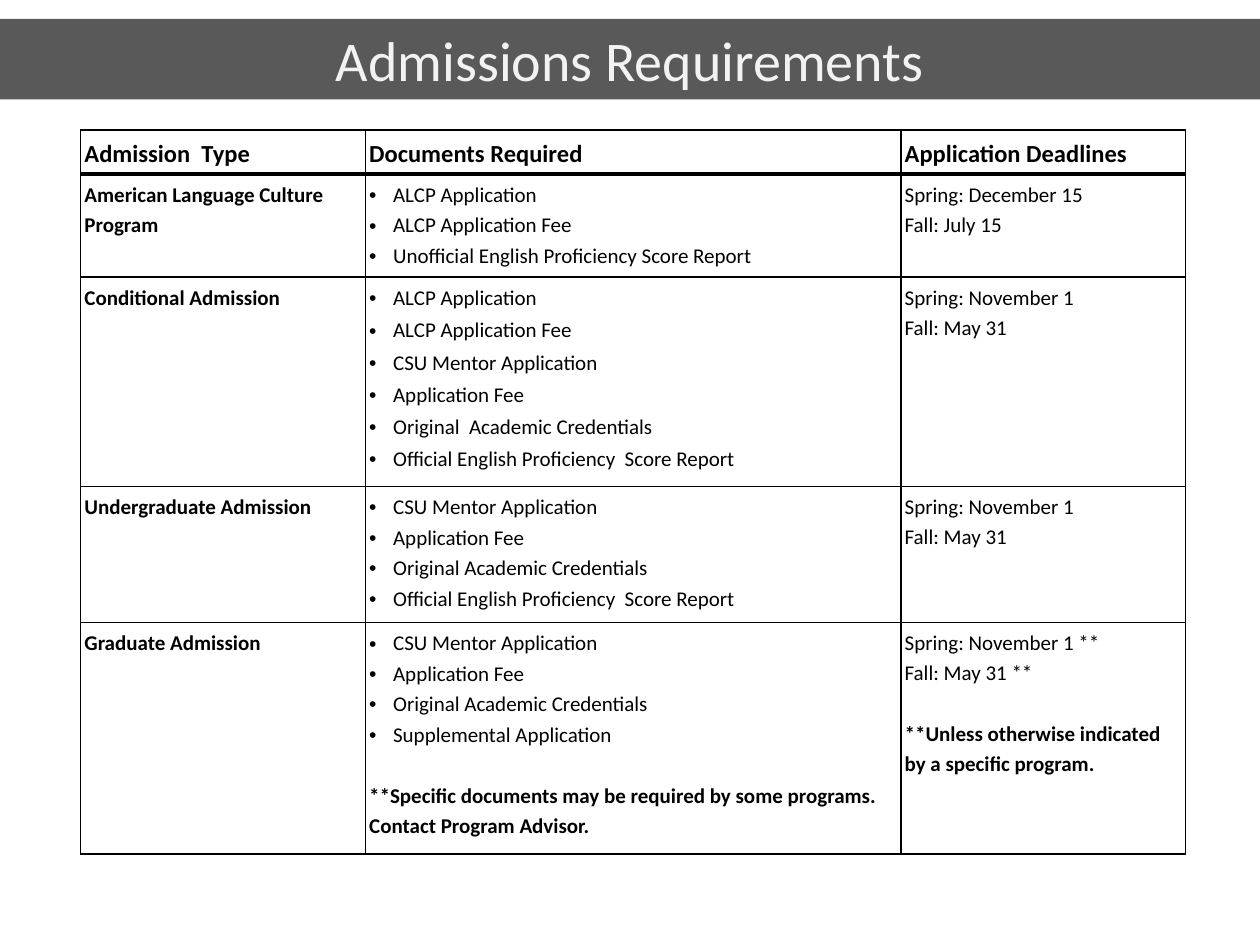
from lxml import etree
from pptx import Presentation
from pptx.dml.color import RGBColor
from pptx.enum.shapes import MSO_SHAPE
from pptx.enum.text import MSO_ANCHOR, PP_ALIGN
from pptx.oxml.ns import qn
from pptx.util import Inches, Pt

RECTANGLE = MSO_SHAPE.RECTANGLE
MIDDLE = MSO_ANCHOR.MIDDLE
CENTER = PP_ALIGN.CENTER

COLORS = {"banner": "595959", "title": "F2F2F2", "ink": "000000", "paper": "FFFFFF"}
FONT = "Calibri"
SLIDE_W, SLIDE_H = 10, 7.5

# Table grid, in inches
TABLE_LEFT, TABLE_TOP = 0.64, 1.03
COL_WIDTHS = [2.26, 4.25, 2.26]
ROW_HEIGHTS = [0.35, 0.82, 1.66, 1.08, 1.84]
CELL_MARGIN = 0.03
BULLET_INDENT = 0.19
THIN, THICK = 1, 2.25
BLANK_LINE = 17.4  # points, one line of 12 pt text

HEADERS = ["Admission  Type", "Documents Required", "Application Deadlines"]
REGULAR_DATES = ["Spring: November 1", "Fall: May 31"]

# type, documents, space after each document, document note, dates, date note
ADMISSIONS = [
    ("American Language Culture Program",
     ["ALCP Application", "ALCP Application Fee",
      "Unofficial English Proficiency Score Report"], 0, None,
     ["Spring: December 15", "Fall: July 15"], None),
    ("Conditional Admission",
     ["ALCP Application", "ALCP Application Fee", "CSU Mentor Application",
      "Application Fee", "Original  Academic Credentials",
      "Official English Proficiency  Score Report"], 1, None,
     REGULAR_DATES, None),
    ("Undergraduate Admission",
     ["CSU Mentor Application", "Application Fee", "Original Academic Credentials",
      "Official English Proficiency  Score Report"], 0, None,
     REGULAR_DATES, None),
    ("Graduate Admission",
     ["CSU Mentor Application", "Application Fee", "Original Academic Credentials",
      "Supplemental Application"], 0,
     "**Specific documents may be required by some programs. Contact Program Advisor.",
     [date + " **" for date in REGULAR_DATES],
     "**Unless otherwise indicated by a specific program."),
]


def rgb(name):
    return RGBColor.from_string(COLORS[name])


def style_font(font, size, color, bold=False):
    font.name = FONT
    font.size = Pt(size)
    font.bold = bold
    font.color.rgb = rgb(color)


def add_banner(s, text):
    banner = s.shapes.add_shape(RECTANGLE, 0, Inches(SLIDE_H * 0.02),
                                Inches(SLIDE_W), Inches(0.64))
    banner.shadow.inherit = False
    banner.fill.solid()
    banner.fill.fore_color.rgb = rgb("banner")
    banner.line.fill.background()
    tf = banner.text_frame
    tf.text = text
    tf.vertical_anchor = MIDDLE
    p = tf.paragraphs[0]
    p.alignment = CENTER
    style_font(p.runs[0].font, 32, "title")


def set_borders(cell, top, bottom):
    tcPr = cell._tc.get_or_add_tcPr()
    sides = [("L", THIN), ("R", THIN), ("T", top), ("B", bottom)]
    for i, (side, width) in enumerate(sides):
        ln = etree.Element(qn("a:ln" + side), w=str(Pt(width)))
        fill = etree.SubElement(ln, qn("a:solidFill"))
        etree.SubElement(fill, qn("a:srgbClr"), val=COLORS["ink"])
        tcPr.insert(i, ln)


def add_bullet(p):
    pPr = p._p.get_or_add_pPr()
    indent = Inches(BULLET_INDENT)
    pPr.set("marL", str(indent))
    pPr.set("indent", str(-indent))
    etree.SubElement(pPr, qn("a:buFont"), typeface="Arial")
    etree.SubElement(pPr, qn("a:buChar"), char="•")


def fill_cell(cell, lines, size=12, bold=False, bullets=False,
              spacing=1.19, after=0, note=None):
    """Write one paragraph per line, then an optional bold note."""
    cell.margin_left = cell.margin_right = Inches(CELL_MARGIN)
    cell.margin_top = cell.margin_bottom = Inches(CELL_MARGIN)
    cell.fill.solid()
    cell.fill.fore_color.rgb = rgb("paper")
    tf = cell.text_frame
    tf.text = "\n".join(lines + ([note] if note else []))
    for i, p in enumerate(tf.paragraphs):
        is_note = i == len(lines)
        p.line_spacing = spacing
        p.space_after = Pt(after)
        if is_note:
            p.space_before = Pt(BLANK_LINE)
        elif bullets:
            add_bullet(p)
        style_font(p.runs[0].font, size, "ink", bold or is_note)


def add_admissions_table(s):
    frame = s.shapes.add_table(len(ROW_HEIGHTS), len(COL_WIDTHS),
                               Inches(TABLE_LEFT), Inches(TABLE_TOP),
                               Inches(sum(COL_WIDTHS)), Inches(sum(ROW_HEIGHTS)))
    table = frame.table
    for column, width in zip(table.columns, COL_WIDTHS):
        column.width = Inches(width)
    for row, height in zip(table.rows, ROW_HEIGHTS):
        row.height = Inches(height)

    # Header row
    for cell, header in zip(table.rows[0].cells, HEADERS):
        fill_cell(cell, [header], size=14, bold=True, after=6)

    # One row per admission type
    for r, (kind, docs, after, doc_note, dates, date_note) in enumerate(ADMISSIONS, 1):
        fill_cell(table.cell(r, 0), [kind], bold=True, after=6)
        fill_cell(table.cell(r, 1), docs, bullets=True, after=after, note=doc_note)
        fill_cell(table.cell(r, 2), dates, spacing=1.18, note=date_note)

    # Grid lines, heavier below the header
    for r, row in enumerate(table.rows):
        for cell in row.cells:
            set_borders(cell, THICK if r == 1 else THIN, THICK if r == 0 else THIN)


def main():
    prs = Presentation()
    prs.slide_width, prs.slide_height = Inches(SLIDE_W), Inches(SLIDE_H)
    s = prs.slides.add_slide(prs.slide_layouts[6])
    add_admissions_table(s)
    add_banner(s, "Admissions Requirements")
    prs.save("out.pptx")


if __name__ == "__main__":
    main()
